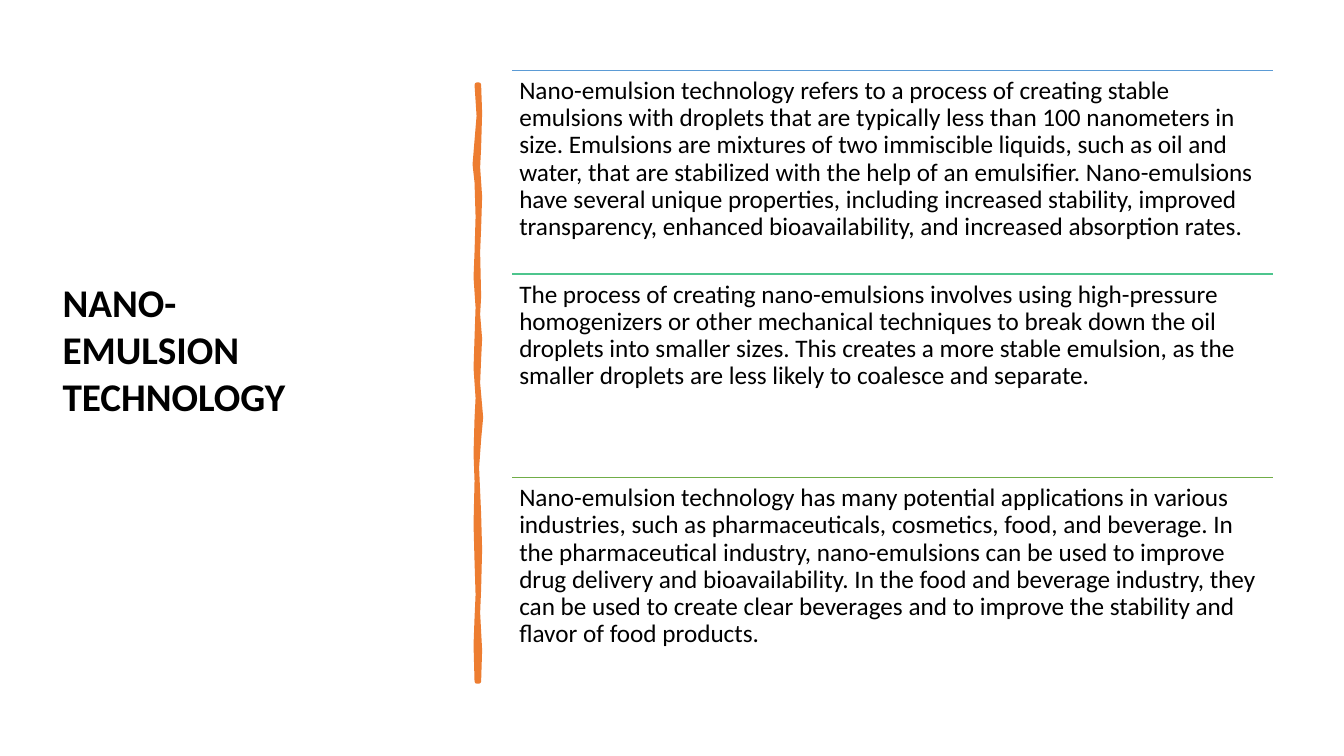
"""Builds the nano-emulsion technology slide."""
from dataclasses import dataclass

from lxml import etree
from pptx import Presentation
from pptx import util as u
from pptx.dml.color import RGBColor
from pptx.enum import shapes, text
from pptx.oxml.ns import qn

PX = 9144
HUES = {"ink": "000000", "bar": "ED7D31", "blue": "5B9BD5",
        "teal": "4DC58D", "green": "70AD47"}
LEFT, TOP, WIDE, STEP = 508, 70, 755, 202
BAR = [
    (475, 84), (476, 112), (475, 146), (474, 166), (476, 195), (475, 226),
    (474, 250), (475, 294), (474, 312), (476, 336), (475, 356), (474, 380),
    (477, 414), (475, 436), (473, 464), (475, 510), (476, 545), (475, 584),
    (474, 608), (476, 645), (475, 676), (473, 676), (472, 640), (473, 613),
    (474, 590), (473, 557), (472, 520), (473, 477), (472, 450), (473, 415),
    (474, 395), (472, 365), (473, 335), (474, 305), (472, 275), (473, 250),
    (474, 215), (473, 181), (471, 163), (475, 115), (473, 84),
]


@dataclass
class Item:
    hue: str
    words: str


ITEMS = [
    Item("blue", "Nano-emulsion technology refers to a process of creating stable "
         "emulsions with droplets that are typically less than 100 nanometers in size. "
         "Emulsions are mixtures of two immiscible liquids, such as oil and water, that "
         "are stabilized with the help of an emulsifier. Nano-emulsions have several "
         "unique properties, including increased stability, improved transparency, "
         "enhanced bioavailability, and increased absorption rates."),
    Item("teal", "The process of creating nano-emulsions involves using high-pressure "
         "homogenizers or other mechanical techniques to break down the oil droplets "
         "into smaller sizes. This creates a more stable emulsion, as the smaller "
         "droplets are less likely to coalesce and separate."),
    Item("green", "Nano-emulsion technology has many potential applications in various "
         "industries, such as pharmaceuticals, cosmetics, food, and beverage. In the "
         "pharmaceutical industry, nano-emulsions can be used to improve drug delivery "
         "and bioavailability. In the food and beverage industry, they can be used to "
         "create clear beverages and to improve the stability and flavor of food "
         "products."),
]


def px(n: int) -> u.Emu:
    return u.Emu(n * PX)


def tint(name: str) -> RGBColor:
    return RGBColor.from_string(HUES[name])


def apply(obj, form: dict) -> None:
    for key, val in form.items():
        setattr(obj, key, val)


def write(shape, words: str, size: int, bold: bool, frame: dict, para: dict) -> None:
    body = shape.text_frame
    body.text = words
    apply(body, {"word_wrap": True, "vertical_anchor": text.MSO_ANCHOR.TOP, **frame})
    line = body.paragraphs[0]
    apply(line, {"alignment": text.PP_ALIGN.LEFT, **para})
    font = line.runs[0].font
    apply(font, {"name": "Calibri", "size": u.Pt(size), "bold": bold})
    font.color.rgb = tint("ink")


def draw_bar(slide) -> None:
    pen = slide.shapes.build_freeform(*BAR[0], scale=PX)
    pen.add_line_segments(BAR[1:], close=True)
    bar = pen.convert_to_shape()
    bar.shadow.inherit = False
    bar.fill.solid()
    bar.fill.fore_color.rgb = tint("bar")
    bar.line.color.rgb = tint("bar")
    bar.line.width = u.Pt(3.25)
    etree.SubElement(bar.line._get_or_add_ln(), qn("a:round"))


def draw_item(slide, item: Item, top: int) -> None:
    rule = slide.shapes.add_connector(
        shapes.MSO_CONNECTOR.STRAIGHT, px(LEFT), px(top), px(LEFT + WIDE), px(top))
    rule.line.color.rgb = tint(item.hue)
    rule.line.width = u.Pt(1)
    etree.SubElement(rule._element.spPr, qn("a:effectLst"))
    box = slide.shapes.add_textbox(px(LEFT), px(top), px(WIDE), px(STEP))
    pads = {f"margin_{side}": px(7) for side in ("left", "top", "right", "bottom")}
    write(box, item.words, 18, False, pads,
          {"line_spacing": 0.9, "space_after": u.Pt(6.3)})


def main() -> None:
    deck = Presentation()
    apply(deck, {"slide_width": px(1333), "slide_height": px(750)})
    slide = deck.slides.add_slide(deck.slide_layouts[5])
    draw_bar(slide)
    for i, item in enumerate(ITEMS):
        draw_item(slide, item, TOP + i * STEP)
    title = slide.shapes.title
    apply(title, {"left": px(52), "top": px(271), "width": px(286), "height": px(151)})
    write(title, "NANO-EMULSION TECHNOLOGY", 28, True,
          {"auto_size": text.MSO_AUTO_SIZE.SHAPE_TO_FIT_TEXT}, {})
    deck.save("out.pptx")


if __name__ == "__main__":
    main()
